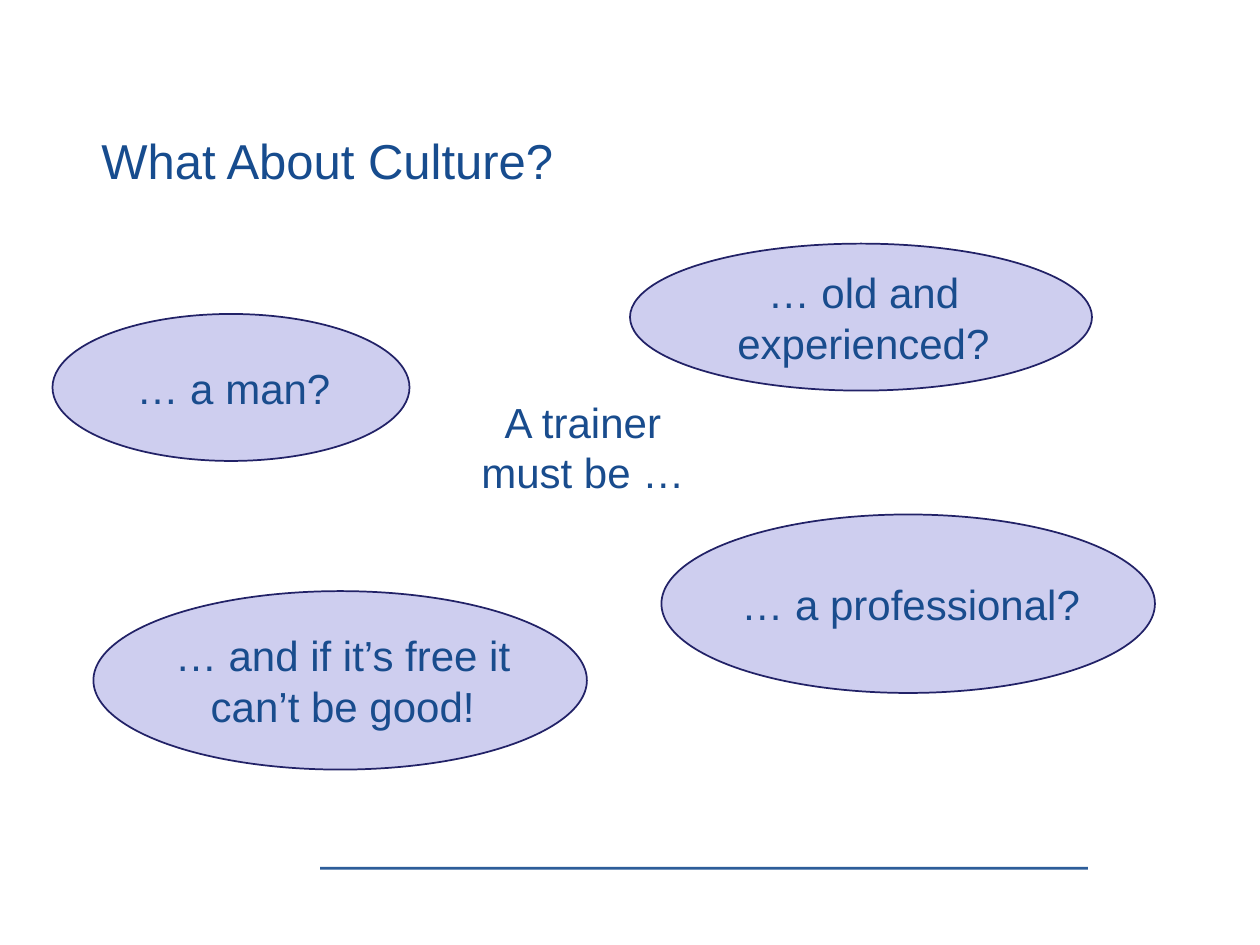
from dataclasses import dataclass

from lxml import etree
from pptx import Presentation, util as u
from pptx.dml.color import RGBColor
from pptx.enum import shapes, text
from pptx.oxml.ns import qn


@dataclass(frozen=True)
class Theme:
    """Colours, type sizes and grid of the slide."""
    font: str = "Arial"
    title: str = "174C8E"
    body: str = "194C8D"
    bubble: str = "CECEEF"
    outline: str = "222267"
    title_size: int = 28
    body_size: int = 24
    columns: int = 120
    rows: int = 90


THEME = Theme()
WIDTH, HEIGHT = u.Inches(10), u.Inches(7.5)
DEFAULT_INSETS = (0.1, 0.05, 0.1, 0.05)
BUBBLES = [
    ("… old and experienced?", (60, 23.2, 44, 14), DEFAULT_INSETS),
    ("… a man?", (5, 29.9, 34, 14), DEFAULT_INSETS),
    ("… a professional?", (63, 49, 47, 17), (0, 0, 0, 0)),
    ("… and if it’s free it can’t be good!", (8.9, 56.3, 47, 17), (0, 0, 0, 0)),
]


def place(column, row, *size):
    """Convert grid columns and rows to slide lengths."""
    x_unit, y_unit = WIDTH / THEME.columns, HEIGHT / THEME.rows
    units = (x_unit, y_unit) * 2
    return [round(value * unit) for value, unit in zip((column, row, *size), units)]


def write(shape, words, size, color, align, insets=DEFAULT_INSETS, wrap=True):
    """Put one formatted paragraph into a shape."""
    frame = shape.text_frame
    frame.text = words
    frame.word_wrap = wrap
    (frame.margin_left, frame.margin_top,
     frame.margin_right, frame.margin_bottom) = map(u.Inches, insets)
    paragraph = frame.paragraphs[0]
    paragraph.alignment = align
    paragraph._p.get_or_add_pPr().set("marL", str(u.Inches(0.04)))
    font = paragraph.runs[0].font
    font.name, font.size = THEME.font, u.Pt(size)
    font.color.rgb = RGBColor.from_string(color)
    return frame


def add_text(slide, box, words, *style, **options):
    """Add a text box on the grid."""
    return write(slide.shapes.add_textbox(*place(*box)), words, *style, **options)


def add_bubble(slide, words, box, insets):
    """Add an outlined ellipse with centred words."""
    shape = slide.shapes.add_shape(shapes.MSO_SHAPE.OVAL, *place(*box))
    shape.shadow.inherit = False
    shape.fill.solid()
    shape.fill.fore_color.rgb = RGBColor.from_string(THEME.bubble)
    shape.line.color.rgb = RGBColor.from_string(THEME.outline)
    shape.line.width = u.Pt(1)
    frame = write(shape, words, THEME.body_size, THEME.body,
                  text.PP_ALIGN.CENTER, insets)
    frame.vertical_anchor = text.MSO_ANCHOR.MIDDLE


def add_rule(slide, start, end):
    """Add the slightly transparent footer rule."""
    rule = slide.shapes.add_connector(
        shapes.MSO_CONNECTOR.STRAIGHT, *place(*start), *place(*end))
    rule.line.color.rgb = RGBColor.from_string(THEME.title)
    rule.line.width = u.Pt(1.6)
    properties = rule._element.spPr
    color = properties.find(".//" + qn("a:srgbClr"))
    etree.SubElement(color, qn("a:alpha")).set("val", "90000")
    etree.SubElement(properties, qn("a:effectLst"))


def main():
    """Build and save the slide."""
    presentation = Presentation()
    presentation.slide_width, presentation.slide_height = WIDTH, HEIGHT
    slide = presentation.slides.add_slide(presentation.slide_layouts[6])
    add_rule(slide, (30.5, 82.7), (103.6, 82.7))
    add_text(slide, (42, 37, 27, 17), "A trainer must be …", THEME.body_size,
             THEME.body, text.PP_ALIGN.CENTER, insets=(0.06, 0.06, 0.1, 0.06))
    title = add_text(slide, (8, 11.8, 46.4, 6.8), "What About Culture?",
                     THEME.title_size, THEME.title, text.PP_ALIGN.LEFT, wrap=False)
    title.auto_size = text.MSO_AUTO_SIZE.SHAPE_TO_FIT_TEXT
    for words, box, insets in BUBBLES:
        add_bubble(slide, words, box, insets)
    presentation.save("out.pptx")


if __name__ == "__main__":
    main()
